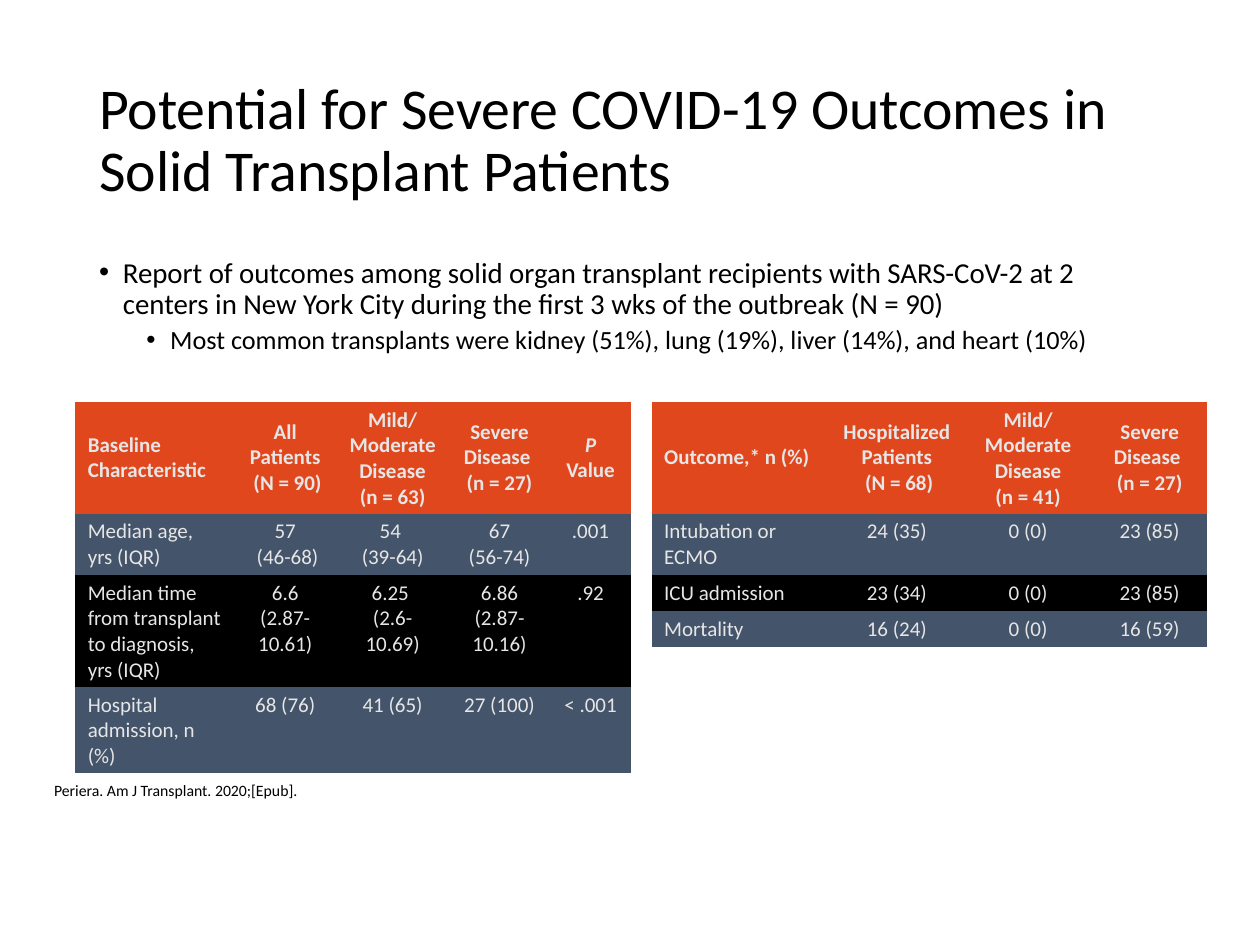
from pptx import Presentation
from pptx.dml.color import RGBColor
from pptx.enum.text import MSO_ANCHOR as Anchor, PP_ALIGN as Align
from pptx.util import Cm, Pt
from lxml.etree import SubElement

BLACK = RGBColor(0x00, 0x00, 0x00)
PALE = RGBColor(0xE7, 0xE6, 0xE6)
ORANGE = RGBColor(0xE1, 0x47, 0x1D)
SLATE = RGBColor(0x44, 0x54, 0x6A)
FONT = "Calibri"
NO_STYLE = "{2D5ABB26-0587-4C30-8999-92F81FD0307C}"

TITLE = ["Potential for Severe COVID-19 Outcomes in ", "Solid Transplant Patients"]
# text, size, left indent in cm, space before
BULLETS = [
    ("Report of outcomes among solid organ transplant recipients with SARS-CoV-2 "
     "at 2 centers in New York City during the first 3 wks of the outbreak (N = 90)",
     16.5, 0.48, 7.5),
    ("Most common transplants were kidney (51%), lung (19%), liver (14%), "
     "and heart (10%)", 15, 1.43, 3.8),
]
HANG = 0.48
SOURCE = "Periera. Am J Transplant. 2020;[Epub]."

# A line break in a cell starts a paragraph; a tuple holds an italic and a plain run.
TABLES = [
    {"left": 1.52, "cols": [3.2, 2.06, 2.27, 2.04, 1.63],
     "rows": [2.23, 1.21, 2.23, 1.72],
     "cells": [
         ["Baseline Characteristic", "All Patients\n (N = 90)",
          "Mild/\nModerate Disease\n(n = 63)", "Severe Disease \n(n = 27)",
          ("P ", "Value")],
         ["Median age, yrs (IQR)", "57\n (46-68)", "54 \n(39-64)", "67\n(56-74)", ".001"],
         ["Median time from transplant to diagnosis, yrs (IQR)", "6.6 (2.87-10.61)",
          "6.25 \n(2.6-10.69)", "6.86 (2.87-10.16)", ".92"],
         ["Hospital admission, n (%)", "68 (76)", "41 (65)", "27 (100)", "< .001"],
     ]},
    {"left": 13.14, "cols": [3.58, 2.72, 2.57, 2.33],
     "rows": [2.23, 1.21, 0.7, 0.7],
     "cells": [
         ["Outcome,* n (%)", "Hospitalized Patients\n (N = 68)",
          "Mild/\nModerate Disease\n(n = 41)", "Severe Disease \n(n = 27)"],
         ["Intubation or ECMO", "24 (35)", "0 (0)", "23 (85)"],
         ["ICU admission", "23 (34)", "0 (0)", "23 (85)"],
         ["Mortality", "16 (24)", "0 (0)", "16 (59)"],
     ]},
]
TABLE_TOP = 8.1


def add_run(para, text, size, color=BLACK, bold=False, italic=False):
    run = para.add_run()
    run.text = text
    font = run.font
    font.name, font.size, font.bold, font.italic = FONT, Pt(size), bold, italic
    font.color.rgb = color


def add_box(slide, left, top, width, height, anchor):
    box = slide.shapes.add_textbox(Cm(left), Cm(top), Cm(width), Cm(height))
    frame = box.text_frame
    frame.word_wrap = True
    frame.vertical_anchor = anchor
    return frame


def next_para(frame, index):
    return frame.add_paragraph() if index else frame.paragraphs[0]


def set_bullet(para, left):
    props = para._p.get_or_add_pPr()
    props.set("marL", str(Cm(left)))
    props.set("indent", str(-Cm(HANG)))
    space = props.nsmap["a"]
    SubElement(props, f"{{{space}}}buFont", typeface="Arial")
    SubElement(props, f"{{{space}}}buChar", char="•")


def fill_cell(cell, text, row, col):
    head = row == 0
    cell.fill.solid()
    cell.fill.fore_color.rgb = ORANGE if head else (SLATE if row % 2 else BLACK)
    cell.vertical_anchor = Anchor.MIDDLE if head else Anchor.TOP
    cell.margin_left = cell.margin_right = Cm(0.25)
    cell.margin_top = cell.margin_bottom = Cm(0.11)
    lines = [text] if isinstance(text, tuple) else [(line,) for line in text.split("\n")]
    for i, runs in enumerate(lines):
        para = next_para(cell.text_frame, i)
        para.alignment = Align.CENTER if col else Align.LEFT
        for j, part in enumerate(runs):
            add_run(para, part, 12, PALE, head, len(runs) > 1 and j == 0)


def add_grid(slide, data):
    cols, rows, cells = data["cols"], data["rows"], data["cells"]
    frame = slide.shapes.add_table(len(rows), len(cols), Cm(data["left"]), Cm(TABLE_TOP),
                                   Cm(sum(cols)), Cm(sum(rows)))
    table = frame.table
    table.horz_banding = False
    table._tbl.tblPr[0].text = NO_STYLE
    for col, width in zip(table.columns, cols):
        col.width = Cm(width)
    for row, height in zip(table.rows, rows):
        row.height = Cm(height)
    for r, line in enumerate(cells):
        for c, text in enumerate(line):
            fill_cell(table.cell(r, c), text, r, c)


def main():
    deck = Presentation()
    deck.slide_width, deck.slide_height = Cm(25.4), Cm(19.05)
    slide = deck.slides.add_slide(deck.slide_layouts[6])

    para = add_box(slide, 1.75, 1.02, 21.9, 3.68, Anchor.MIDDLE).paragraphs[0]
    para.line_spacing = 0.9
    for i, line in enumerate(TITLE):
        if i:
            para.add_line_break()
        add_run(para, line, 33)

    body = add_box(slide, 1.75, 5.08, 21.9, 12.09, Anchor.TOP)
    for i, (text, size, left, before) in enumerate(BULLETS):
        para = next_para(body, i)
        para.level = i
        para.line_spacing = 0.9
        para.space_before = Pt(before)
        set_bullet(para, left)
        add_run(para, text, size)

    note = add_box(slide, 0.84, 15.6, 17.9, 0.64, Anchor.BOTTOM)
    add_run(note.paragraphs[0], SOURCE, 9)

    for data in TABLES:
        add_grid(slide, data)
    deck.save("out.pptx")


if __name__ == "__main__":
    main()
